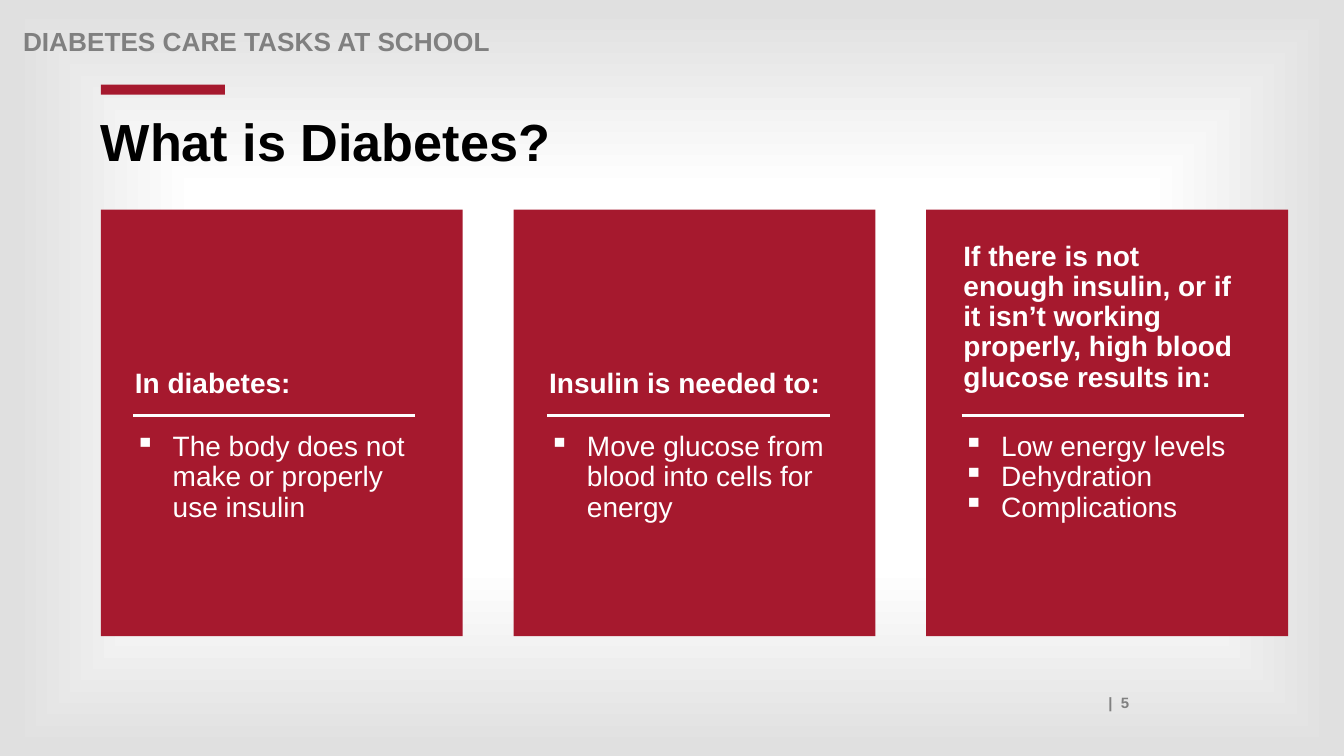
from pptx import Presentation
from pptx.dml.color import RGBColor
from pptx.enum.shapes import MSO_CONNECTOR, MSO_SHAPE
from pptx.enum.text import MSO_ANCHOR, PP_ALIGN
from pptx.oxml import parse_xml
from pptx.oxml.ns import nsdecls, qn
from pptx.util import Pt

RECTANGLE = MSO_SHAPE.RECTANGLE
STRAIGHT = MSO_CONNECTOR.STRAIGHT
TOP, BOTTOM = MSO_ANCHOR.TOP, MSO_ANCHOR.BOTTOM
LEFT, RIGHT = PP_ALIGN.LEFT, PP_ALIGN.RIGHT

FONT = "Arial"
RED, WHITE, GREY, BLACK = "A6192E", "FFFFFF", "808080", "000000"
GRADIENT_STOPS = [(12, WHITE), (50, WHITE), (98, "E0E0E0")]
BULLET_INDENT = 27

CARD_LEFT, CARD_STEP = 72, 294.8
TEXT_LEFT, TEXT_STEP = 89.3, 295.9
CARDS = [
    ("In diabetes:", ["The body does not make or properly use insulin"], 120.2),
    ("Insulin is needed to:", ["Move glucose from blood into cells for energy"], 120.2),
    (
        "If there is not enough insulin, or if it isn’t working properly, "
        "high blood glucose results in:",
        ["Low energy levels", "Dehydration", "Complications"],
        115.9,
    ),
]


def color(value):
    """Turn a hex string into a colour."""
    return RGBColor.from_string(value)


def set_background(page):
    """Fill the page with a gradient that spreads from its centre."""
    stops = "".join(
        f'<a:gs pos="{place * 1000}"><a:srgbClr val="{value}"/></a:gs>'
        for place, value in GRADIENT_STOPS
    )
    background = parse_xml(
        f'<p:bg {nsdecls("p", "a")}><p:bgPr><a:gradFill rotWithShape="1">'
        f'<a:gsLst>{stops}</a:gsLst><a:path path="shape">'
        '<a:fillToRect l="50000" t="50000" r="50000" b="50000"/></a:path>'
        "</a:gradFill><a:effectLst/></p:bgPr></p:bg>"
    )
    page.element.cSld.insert(0, background)


def add_bullet(para):
    """Give a paragraph a square bullet with a hanging indent."""
    properties = para._p.get_or_add_pPr()
    properties.set("marL", str(Pt(BULLET_INDENT)))
    properties.set("indent", str(-Pt(BULLET_INDENT)))
    properties.append(parse_xml(f'<a:buChar {nsdecls("a")} char="▪"/>'))


def add_text(page, lines, left, top, width, height, *, size, ink, bold=False,
             bullets=False, spacing=0.9, align=LEFT, anchor=TOP, inset=True):
    """Add a text box with one paragraph for each line."""
    box = page.shapes.add_textbox(Pt(left), Pt(top), Pt(width), Pt(height))
    frame = box.text_frame
    frame.word_wrap = True
    frame.vertical_anchor = anchor
    if not inset:
        frame.margin_left = frame.margin_right = 0
        frame.margin_top = frame.margin_bottom = 0
    for index, line in enumerate(lines):
        para = frame.paragraphs[0] if index == 0 else frame.add_paragraph()
        if bullets:
            add_bullet(para)
        para.alignment = align
        para.line_spacing = spacing
        span = para.add_run()
        span.text = line
        span.font.name = FONT
        span.font.size = Pt(size)
        span.font.bold = bold
        span.font.color.rgb = color(ink)


def add_block(page, left, top, width, height):
    """Add a plain red rectangle."""
    block = page.shapes.add_shape(
        RECTANGLE, Pt(left), Pt(top), Pt(width), Pt(height))
    block.shadow.inherit = False
    block.fill.solid()
    block.fill.fore_color.rgb = color(RED)
    block.line.fill.background()


def add_rule(page, left, top, width):
    """Add a horizontal white line."""
    rule = page.shapes.add_connector(
        STRAIGHT, Pt(left), Pt(top), Pt(left + width), Pt(top))
    rule.line.color.rgb = color(WHITE)
    rule.line.width = Pt(2)
    rule._element.spPr.append(
        rule._element.makeelement(qn("a:effectLst"), {}))


def add_card(page, index, heading, points, heading_height):
    """Add a red card with a heading, a rule and bullet points."""
    left = TEXT_LEFT + index * TEXT_STEP
    add_block(page, CARD_LEFT + index * CARD_STEP, 149.8, 258.5, 304.6)
    add_text(page, [heading], left, 168.5, 213.1, heading_height,
             size=20, ink=WHITE, bold=True, anchor=BOTTOM)
    add_rule(page, left + 5.8, 296.6, 201.6)
    add_text(page, points, left, 305.3, 218.2, 66.2,
             size=20, ink=WHITE, bullets=True)


def main():
    """Build the slide and save the deck."""
    deck = Presentation()
    deck.slide_width, deck.slide_height = Pt(960), Pt(540)
    page = deck.slides.add_slide(deck.slide_layouts[6])
    set_background(page)
    add_text(page, ["DIABETES CARE TASKS AT SCHOOL"], 9.4, 17.3, 792, 20.2,
             size=18.7, ink=GREY, bold=True)
    add_block(page, CARD_LEFT, 60.5, 88.6, 7.2)
    add_text(page, ["What is Diabetes?"], CARD_LEFT, 82.8, 816.5, 41,
             size=37.3, ink=BLACK, bold=True, inset=False)
    for index, card in enumerate(CARDS):
        add_card(page, index, *card)
    add_text(page, ["|  5"], 87.1, 491.8, 726.5, 20.2,
             size=10.7, ink=GREY, bold=True, spacing=1.0, align=RIGHT)
    deck.save("out.pptx")


if __name__ == "__main__":
    main()
